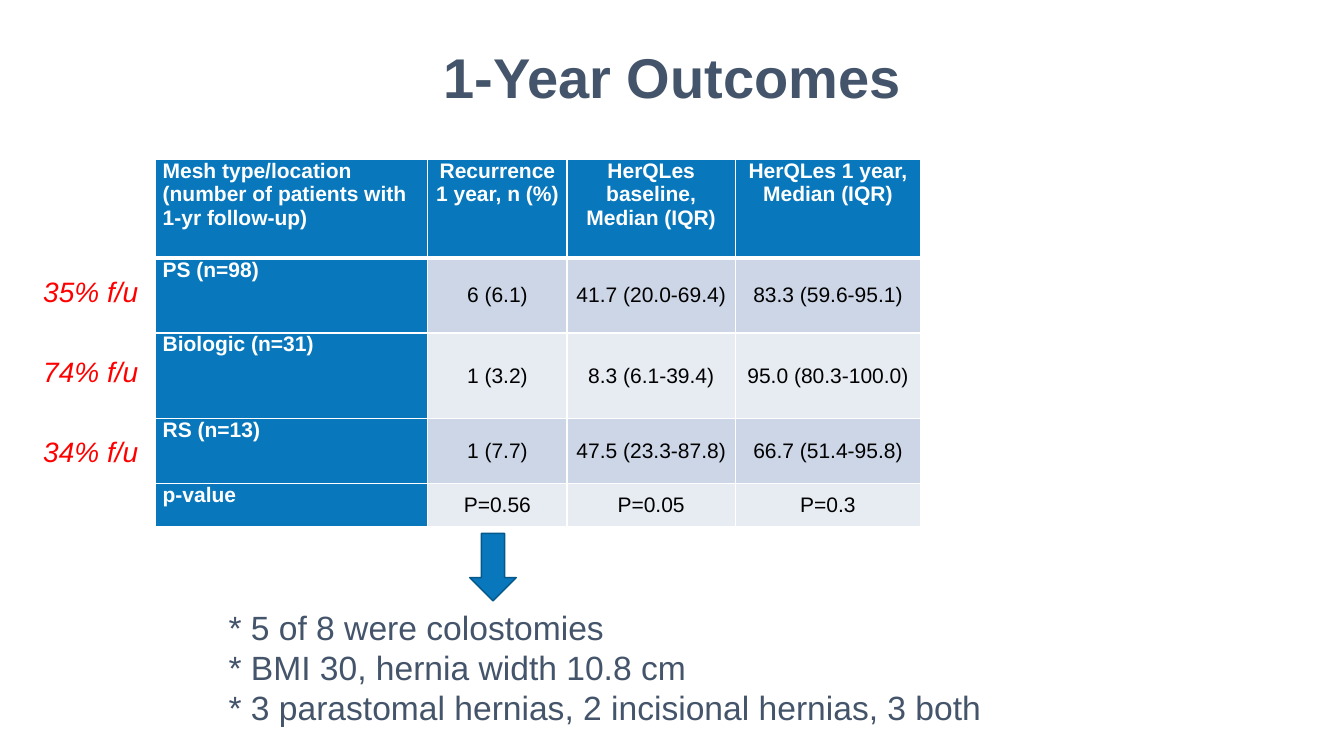
from dataclasses import dataclass

from lxml.etree import SubElement
from pptx import Presentation
from pptx.dml.color import RGBColor
from pptx.enum.shapes import MSO_SHAPE as Shape
from pptx.enum.text import MSO_ANCHOR as Anchor, PP_ALIGN as Align
from pptx.oxml.ns import qn
from pptx.util import Cm, Pt

FONT = "Arial"
SLATE, BLUE, DARK_BLUE = "44546A", "0877BC", "06588B"
WHITE, BLACK, RED = "FFFFFF", "000000", "FF0000"
BANDS = ("CCD6E7", "E7ECF3")

COLUMN_WIDTHS = (6.86, 3.51, 4.24, 4.67)
ROW_HEIGHTS = (2.49, 1.88, 2.16, 1.63, 1.09)
OUTCOMES = (
    ("Mesh type/location (number of patients with 1-yr follow-up)",
     "Recurrence 1 year, n (%)",
     "HerQLes baseline, Median (IQR)",
     "HerQLes 1 year, Median (IQR)"),
    ("PS (n=98)", "6 (6.1)", "41.7 (20.0-69.4)", "83.3 (59.6-95.1)"),
    ("Biologic (n=31)", "1 (3.2)", "8.3 (6.1-39.4)", "95.0 (80.3-100.0)"),
    ("RS (n=13)", "1 (7.7)", "47.5 (23.3-87.8)", "66.7 (51.4-95.8)"),
    ("p-value", "P=0.56", "P=0.05", "P=0.3"),
)


@dataclass
class Note:
    text: str
    left: float
    top: float
    width: float
    height: float
    size: int
    color: str
    italic: bool = False


FOLLOW_UPS = [
    Note(f"{rate}% f/u", 0.84, 6.78 + 2.02 * i, 3.2, 1.11, 20, RED, italic=True)
    for i, rate in enumerate((35, 74, 34))
]
FINDINGS = Note(
    "* 5 of 8 were colostomies\n"
    "* BMI 30, hernia width 10.8 cm\n"
    "* 3 parastomal hernias, 2 incisional hernias, 3 both",
    5.51, 15.16, 20.12, 3.33, 24, SLATE)


def rgb(value: str) -> RGBColor:
    return RGBColor.from_string(value)


def write(tf, text: str, *, size: int, color: str, bold: bool = False,
          italic: bool = False, align=Align.LEFT, spacing: float = 1.0) -> None:
    tf.text = text
    tf.word_wrap = True
    for p in tf.paragraphs:
        p.alignment = align
        p.line_spacing = spacing
        for r in p.runs:
            r.font.name, r.font.size = FONT, Pt(size)
            r.font.bold, r.font.italic = bold, italic
            r.font.color.rgb = rgb(color)


def set_borders(cell, **widths: float) -> None:
    """Give the cell white borders; call before the fill is set."""
    tc_pr = cell._tc.get_or_add_tcPr()
    for side, width in widths.items():
        ln = SubElement(tc_pr, qn(f"a:ln{side}"), w=str(Pt(width)))
        fill = SubElement(ln, qn("a:solidFill"))
        SubElement(fill, qn("a:srgbClr"), val=WHITE)


def add_title(s, text: str) -> None:
    title = s.shapes.title
    title.left, title.top = Cm(0), Cm(0.18)
    title.width, title.height = Cm(33.87), Cm(3.68)
    tf = title.text_frame
    tf.vertical_anchor = Anchor.MIDDLE
    write(tf, text, size=40, color=SLATE, bold=True, align=Align.CENTER, spacing=0.9)


def add_outcomes_table(s) -> None:
    table = s.shapes.add_table(
        len(OUTCOMES), len(COLUMN_WIDTHS), Cm(3.92), Cm(4.02),
        Cm(sum(COLUMN_WIDTHS)), Cm(sum(ROW_HEIGHTS))).table
    for column, width in zip(table.columns, COLUMN_WIDTHS):
        column.width = Cm(width)
    for i, (row, height) in enumerate(zip(table.rows, ROW_HEIGHTS)):
        row.height = Cm(height)
        for j, cell in enumerate(row.cells):
            heading = i == 0 or j == 0
            set_borders(cell, L=1, R=1, T=3 if i == 1 else 1, B=3 if i == 0 else 1)
            cell.fill.solid()
            cell.fill.fore_color.rgb = rgb(BLUE if heading else BANDS[(i - 1) % 2])
            cell.margin_left = cell.margin_right = Cm(0.18)
            cell.margin_top = cell.margin_bottom = 0
            cell.vertical_anchor = Anchor.TOP if heading else Anchor.MIDDLE
            write(cell.text_frame, OUTCOMES[i][j], size=15, bold=heading,
                  color=WHITE if heading else BLACK,
                  align=Align.LEFT if j == 0 else Align.CENTER)


def add_arrow(s) -> None:
    arrow = s.shapes.add_shape(Shape.DOWN_ARROW, Cm(11.84), Cm(13.44), Cm(1.17), Cm(1.7))
    arrow.shadow.inherit = False
    arrow.fill.solid()
    arrow.fill.fore_color.rgb = rgb(BLUE)
    arrow.line.color.rgb = rgb(DARK_BLUE)
    arrow.line.width = Pt(1)


def add_note(s, note: Note) -> None:
    box = s.shapes.add_textbox(Cm(note.left), Cm(note.top), Cm(note.width), Cm(note.height))
    write(box.text_frame, note.text, size=note.size, color=note.color, italic=note.italic)


def main() -> None:
    prs = Presentation()
    prs.slide_width, prs.slide_height = Cm(33.87), Cm(19.05)
    s = prs.slides.add_slide(prs.slide_layouts[5])
    add_title(s, "1-Year Outcomes")
    add_outcomes_table(s)
    add_arrow(s)
    for note in (FINDINGS, *FOLLOW_UPS):
        add_note(s, note)
    prs.save("out.pptx")


if __name__ == "__main__":
    main()
